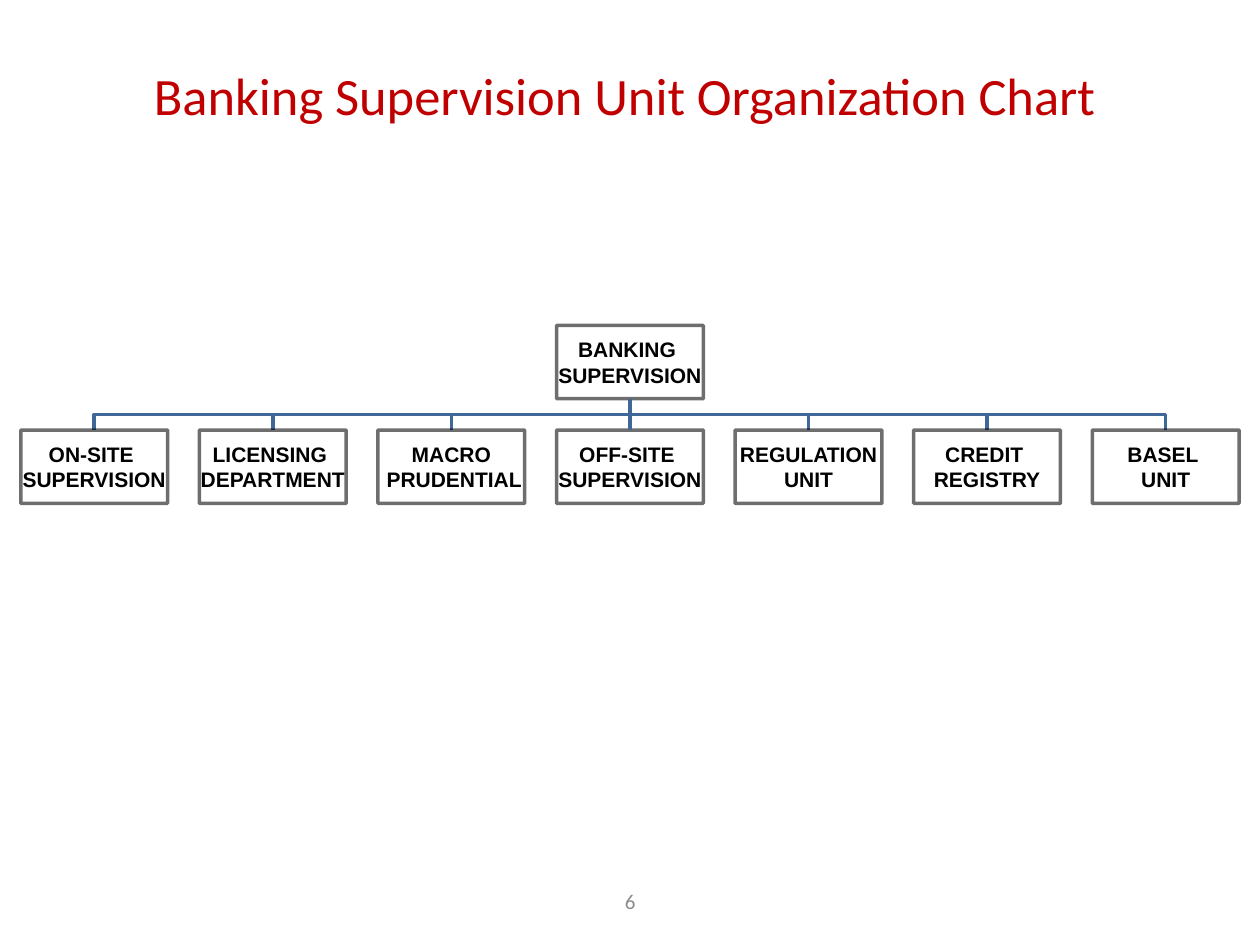
"""Build the organization chart slide of a banking supervision unit."""
from lxml import etree
from pptx import Presentation
from pptx.dml.color import RGBColor
from pptx.enum.shapes import MSO_CONNECTOR, MSO_SHAPE
from pptx.enum.text import MSO_ANCHOR, MSO_AUTO_SIZE, PP_ALIGN
from pptx.oxml.ns import qn
from pptx.util import Cm, Pt

CENTER = PP_ALIGN.CENTER
MIDDLE = MSO_ANCHOR.MIDDLE
NO_FIT = MSO_AUTO_SIZE.NONE
RECTANGLE = MSO_SHAPE.RECTANGLE
STRAIGHT = MSO_CONNECTOR.STRAIGHT
BOTTOM_SIDE, TOP_SIDE = 2, 0

BOX_WIDTH, BOX_HEIGHT = 2.96, 1.48
MIDDLE_X, PITCH = 12.7, 3.6
HEAD_TOP, UNIT_TOP = 6.56, 8.67
HEAD = ["BANKING ", "SUPERVISION"]
UNITS = [
    ["ON-SITE ", "SUPERVISION"],
    ["LICENSING ", "DEPARTMENT"],
    ["MACRO", " PRUDENTIAL"],
    ["OFF-SITE ", "SUPERVISION"],
    ["REGULATION", " UNIT "],
    ["CREDIT ", "REGISTRY"],
    ["BASEL ", "UNIT"],
]


def color(value):
    return RGBColor.from_string(value)


class ChartPage:
    title_font, box_font = "Calibri", "Arial"
    title_color, number_color = "C00000", "8C8C8C"
    box_color, link_color = "000000", "3F6797"
    line_width = Pt(2)

    def __init__(self, deck):
        self.page = deck.slides.add_slide(deck.slide_layouts[5])
        self.shapes = self.page.shapes

    def add_lines(self, box, lines, font, size, ink, bold=False):
        frame = box.text_frame
        frame.auto_size = NO_FIT
        frame.vertical_anchor = MIDDLE
        for index, line in enumerate(lines):
            para = frame.paragraphs[0] if index == 0 else frame.add_paragraph()
            para.alignment = CENTER
            span = para.add_run()
            span.text = line
            span.font.name = font
            span.font.size = Pt(size)
            span.font.bold = bold
            span.font.color.rgb = color(ink)
        return frame

    def title(self, text, left, top, width, height):
        box = self.shapes.title
        box.left, box.top = Cm(left), Cm(top)
        box.width, box.height = Cm(width), Cm(height)
        self.add_lines(box, [text], self.title_font, 30, self.title_color)

    def number(self, text, left, top, width, height):
        box = self.shapes.add_textbox(Cm(left), Cm(top), Cm(width), Cm(height))
        frame = self.add_lines(box, [text], self.title_font, 12, self.number_color)
        frame.word_wrap = True

    def box(self, lines, center, top):
        box = self.shapes.add_shape(
            RECTANGLE, Cm(center - BOX_WIDTH / 2), Cm(top), Cm(BOX_WIDTH), Cm(BOX_HEIGHT)
        )
        box.shadow.inherit = False
        box.fill.background()
        self.stroke(box, self.box_color)
        tint = box._element.spPr.find(qn("a:ln")).find(qn("a:solidFill"))[0]
        etree.SubElement(tint, qn("a:alpha"), val="56000")
        frame = self.add_lines(box, lines, self.box_font, 12, self.box_color, True)
        frame.word_wrap = False
        frame.margin_left = frame.margin_right = Cm(0.03)
        frame.margin_top = frame.margin_bottom = Cm(0.03)
        return box

    def stroke(self, shape, ink):
        shape.line.color.rgb = color(ink)
        shape.line.width = self.line_width

    def straight_link(self, parent, child):
        link = self.shapes.add_connector(STRAIGHT, 0, 0, 0, 0)
        link.begin_connect(parent, BOTTOM_SIDE)
        link.end_connect(child, TOP_SIDE)
        self.stroke(link, self.link_color)
        etree.SubElement(link._element.spPr, qn("a:effectLst"))

    def bent_link(self, start, end, start_y, end_y):
        middle_y = (start_y + end_y) / 2
        builder = self.shapes.build_freeform(Cm(start), Cm(start_y))
        corners = [(start, middle_y), (end, middle_y), (end, end_y)]
        builder.add_line_segments([(Cm(x), Cm(y)) for x, y in corners], close=False)
        link = builder.convert_to_shape()
        link.shadow.inherit = False
        link.fill.background()
        self.stroke(link, self.link_color)


def main():
    deck = Presentation()
    deck.slide_width, deck.slide_height = Cm(25.4), Cm(19.05)
    chart = ChartPage(deck)
    chart.title("Banking Supervision Unit Organization Chart", 1.27, 0.43, 22.66, 2.97)
    chart.number("6", 8.68, 17.65, 8.05, 1.02)

    centers = [MIDDLE_X + (i - len(UNITS) // 2) * PITCH for i in range(len(UNITS))]
    for center in centers:
        if center != MIDDLE_X:
            chart.bent_link(MIDDLE_X, center, HEAD_TOP + BOX_HEIGHT, UNIT_TOP)
    head = chart.box(HEAD, MIDDLE_X, HEAD_TOP)
    for lines, center in zip(UNITS, centers):
        unit = chart.box(lines, center, UNIT_TOP)
        if center == MIDDLE_X:
            chart.straight_link(head, unit)
    deck.save("out.pptx")


if __name__ == "__main__":
    main()
